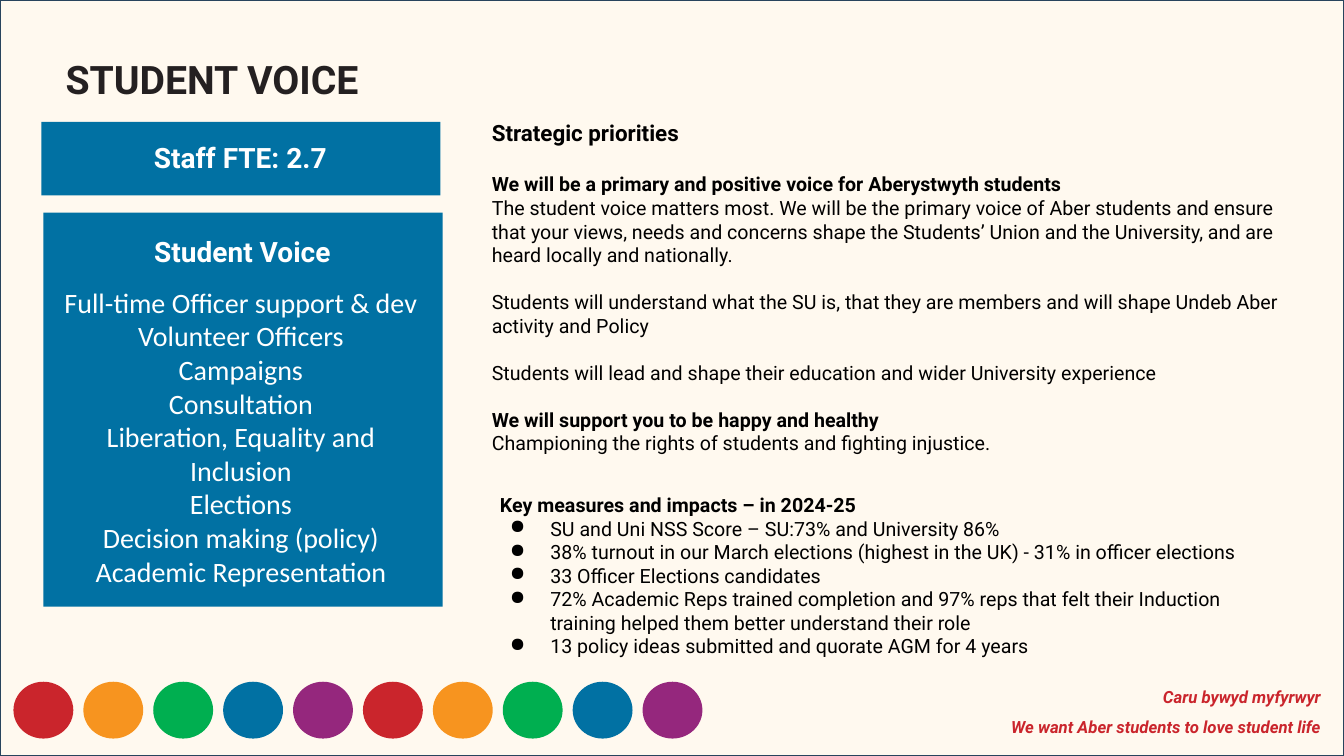
from lxml import etree
from pptx import Presentation
from pptx.dml.color import RGBColor
from pptx.enum import shapes, text
from pptx.oxml import ns
from pptx.util import Inches, Pt

COLORS = {
    "cream": "FFF9EF", "frame": "28445D", "ink": "242021", "black": "000000", "white": "FFFFFF",
    "red": "CA252C", "orange": "F7941F", "green": "00AF50", "blue": "0171A3", "purple": "95277D",
}

presentation = Presentation()
presentation.slide_width = Inches(13.33)
presentation.slide_height = Inches(7.5)
slide = presentation.slides.add_slide(presentation.slide_layouts[5])
slide.background.fill.solid()
slide.background.fill.fore_color.rgb = RGBColor.from_string(COLORS["cream"])


def add_panel(kind, left, top, width, height, fill=None, line=None, line_width=1):
    shape = slide.shapes.add_shape(kind, Inches(left), Inches(top), Inches(width), Inches(height))
    shape.shadow.inherit = False
    if fill:
        shape.fill.solid()
        shape.fill.fore_color.rgb = RGBColor.from_string(COLORS[fill])
    else:
        shape.fill.background()
    if line:
        shape.line.color.rgb = RGBColor.from_string(COLORS[line])
        shape.line.width = Pt(line_width)
    else:
        shape.line.fill.background()


def write_text(shape, box, lines, color, font="Roboto", align="LEFT", inset=0.05, spacing=1.0, italic=False):
    shape.left, shape.top, shape.width, shape.height = [Inches(length) for length in box]
    frame = shape.text_frame
    frame.word_wrap = True
    frame.auto_size = text.MSO_AUTO_SIZE.NONE
    frame.vertical_anchor = text.MSO_ANCHOR.TOP
    frame.margin_left = frame.margin_right = Inches(0.1)
    frame.margin_top = frame.margin_bottom = Inches(inset)
    for index, (words, size, bold, before, bullet) in enumerate(lines):
        paragraph = frame.paragraphs[0] if index == 0 else frame.add_paragraph()
        paragraph.alignment = getattr(text.PP_ALIGN, align)
        paragraph.line_spacing = spacing
        paragraph.space_before = Pt(before)
        if bullet:
            properties = paragraph._p.get_or_add_pPr()
            properties.set("marL", str(Inches(0.5)))
            properties.set("indent", str(Inches(-0.4)))
            etree.SubElement(properties, ns.qn("a:buChar")).set("char", "●")
        run = paragraph.add_run()
        run.text = words
        run.font.name = font
        run.font.size = Pt(size)
        run.font.bold = bold
        run.font.italic = italic
        run.font.color.rgb = RGBColor.from_string(COLORS[color])


add_panel(shapes.MSO_SHAPE.RECTANGLE, 0, 0, 13.33, 7.5, line="frame", line_width=2)
add_panel(shapes.MSO_SHAPE.RECTANGLE, 0.43, 2.11, 3.96, 3.91, fill="blue")
add_panel(shapes.MSO_SHAPE.RECTANGLE, 0.41, 1.21, 3.96, 0.73, fill="blue")

circle_colors = ["red", "orange", "green", "blue", "purple"] * 2
for index, color in enumerate(circle_colors):
    add_panel(shapes.MSO_SHAPE.OVAL, 0.14 + index * 6.24 / 9, 6.77, 0.58, 0.55, color, color)

write_text(slide.shapes.title, (0.55, 0.5, 4.86, 1.04), [("STUDENT VOICE", 28, True, 0, False)], "ink")

activities = [
    "Full-time Officer support & dev",
    "Volunteer Officers",
    "Campaigns",
    "Consultation",
    "Liberation, Equality and Inclusion",
    "Elections",
    "Decision making (policy)",
    "Academic Representation",
]
priorities = [
    ("Strategic priorities", 16, True, 0, False),
    ("We will be a primary and positive voice for Aberystwyth students", 14, True, 19, False),
    ("The student voice matters most. We will be the primary voice of Aber students and ensure that your views, "
     "needs and concerns shape the Students’ Union and the University, and are heard locally and nationally.",
     14, False, 0, False),
    ("Students will understand what the SU is, that they are members and will shape Undeb Aber activity and Policy",
     14, False, 16.8, False),
    ("Students will lead and shape their education and wider University experience", 14, False, 16.8, False),
    ("We will support you to be happy and healthy", 14, True, 16.8, False),
    ("Championing the rights of students and fighting injustice.", 14, False, 0, False),
]
measures = [
    "SU and Uni NSS Score – SU:73% and University 86%",
    "38% turnout in our March elections (highest in the UK) - 31% in officer elections",
    "33 Officer Elections candidates",
    "72% Academic Reps trained completion and 97% reps that felt their Induction training helped them "
    "better understand their role",
    "13 policy ideas submitted and quorate AGM for 4 years",
]
slogans = ["Caru bywyd myfyrwyr", "We want Aber students to love student life"]

text_boxes = [
    ((6.67, 6.66, 6.53, 0.67), [(slogan, 12, True, 0, False) for slogan in slogans], "red",
     {"align": "RIGHT", "spacing": 1.5, "italic": True}),
    ((0.51, 2.78, 3.76, 2.79), [(activity, 20, False, 0, False) for activity in activities], "white",
     {"font": "Calibri", "align": "CENTER"}),
    ((0.42, 2.28, 3.97, 0.45), [("Student Voice", 20, True, 0, False)], "white", {"align": "CENTER"}),
    ((0.4, 1.38, 3.97, 0.4), [("Staff FTE: 2.7", 20, True, 0, False)], "white",
     {"align": "CENTER", "spacing": 0.9}),
    ((4.86, 4.79, 7.64, 1.9),
     [("Key measures and impacts – in 2024-25", 14, True, 0, False)]
     + [(measure, 14, False, 0, True) for measure in measures], "black", {"inset": 0.1}),
    ((4.78, 1.08, 8.27, 3.6), priorities, "black", {"inset": 0.1}),
]
for box, lines, color, options in text_boxes:
    text_box = slide.shapes.add_textbox(0, 0, 0, 0)
    write_text(text_box, box, lines, color, **options)

presentation.save("out.pptx")
